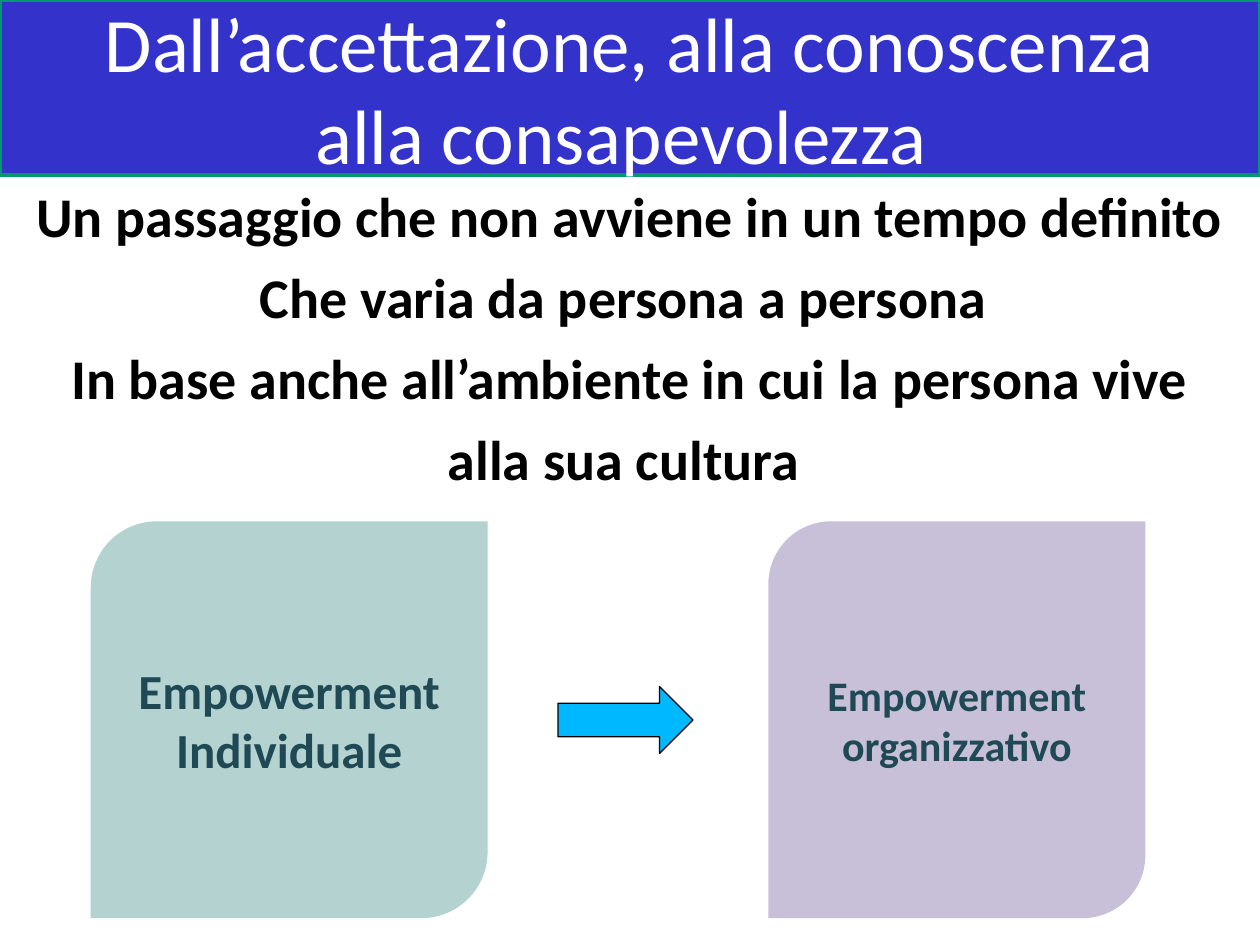
from lxml import etree
from pptx import Presentation
from pptx import util as u
from pptx.dml.color import RGBColor
from pptx.enum import shapes, text
from pptx.oxml import ns

KIND = shapes.MSO_SHAPE
WIDE, HIGH = 25.4, 19.05
HEAD = 3.53  # height of the title band

TITLE = ["Dall’accettazione, alla conoscenza", "alla consapevolezza "]
BODY = [
    "Un passaggio che non avviene in un tempo definito",
    "Che varia da persona a persona ",
    "In base anche all’ambiente in cui la persona vive",
    "alla sua cultura ",
]
# text, left, width, fill, opacity in percent, text size
CARDS = [
    ("Empowerment Individuale", 1.83, 8, "6DA7A2", 51, 28),
    ("Empowerment organizzativo", 15.49, 7.6, "9686B5", 52, 24),
]
CARD_TOP, CARD_TALL = 10.51, 8


def tint(hue):
    return RGBColor.from_string(hue)


def write(shape, lines, size, hue, bold=False, gap=0):
    """Fill the shape with centred paragraphs."""
    frame = shape.text_frame
    frame.word_wrap = True
    frame.text = "\n".join(lines)
    for para in frame.paragraphs:
        para.alignment = text.PP_ALIGN.CENTER
        para.space_before = u.Pt(gap)
        font = para.font
        font.name, font.size, font.bold = "Calibri", u.Pt(size), bold
        font.color.rgb = tint(hue)
    return frame


def draw(kind, box, fill, line=None, thick=0):
    """Add a preset shape; box is left, top, width, height in cm."""
    shape = slide.shapes.add_shape(kind, *map(u.Cm, box))
    shape.shadow.inherit = False
    shape.fill.solid()
    shape.fill.fore_color.rgb = tint(fill)
    if line:
        shape.line.color.rgb = tint(line)
        shape.line.width = u.Pt(thick)
    else:
        shape.line.fill.background()
    return shape


def fade(shape, part):
    """Set the opacity of a solid fill, in percent."""
    color = shape.fill._xPr.find(".//" + ns.qn("a:srgbClr"))
    etree.SubElement(color, ns.qn("a:alpha")).set("val", str(part * 1000))


deck = Presentation()
deck.slide_width, deck.slide_height = u.Cm(WIDE), u.Cm(HIGH)
slide = deck.slides.add_slide(deck.slide_layouts[6])

body = slide.shapes.add_textbox(0, u.Cm(HEAD), u.Cm(WIDE), u.Cm(16.5))
write(body, BODY, 32, "000000", bold=True, gap=8)

band = draw(KIND.RECTANGLE, (0, 0, WIDE, HEAD), "3333CC", "009771", 2)
write(band, TITLE, 44, "FFFFFF").vertical_anchor = text.MSO_ANCHOR.MIDDLE

for label, left, wide, fill, part, size in CARDS:
    card = draw(KIND.ROUND_2_DIAG_RECTANGLE,
                (left, CARD_TOP, wide, CARD_TALL), fill)
    fade(card, part)
    frame = write(card, [label], size, "1F4A55", bold=True)
    frame.vertical_anchor = text.MSO_ANCHOR.MIDDLE

draw(KIND.RIGHT_ARROW, (11.25, 13.84, 2.72, 1.35), "00B8FF", "000000", 0.75)

deck.save("out.pptx")
